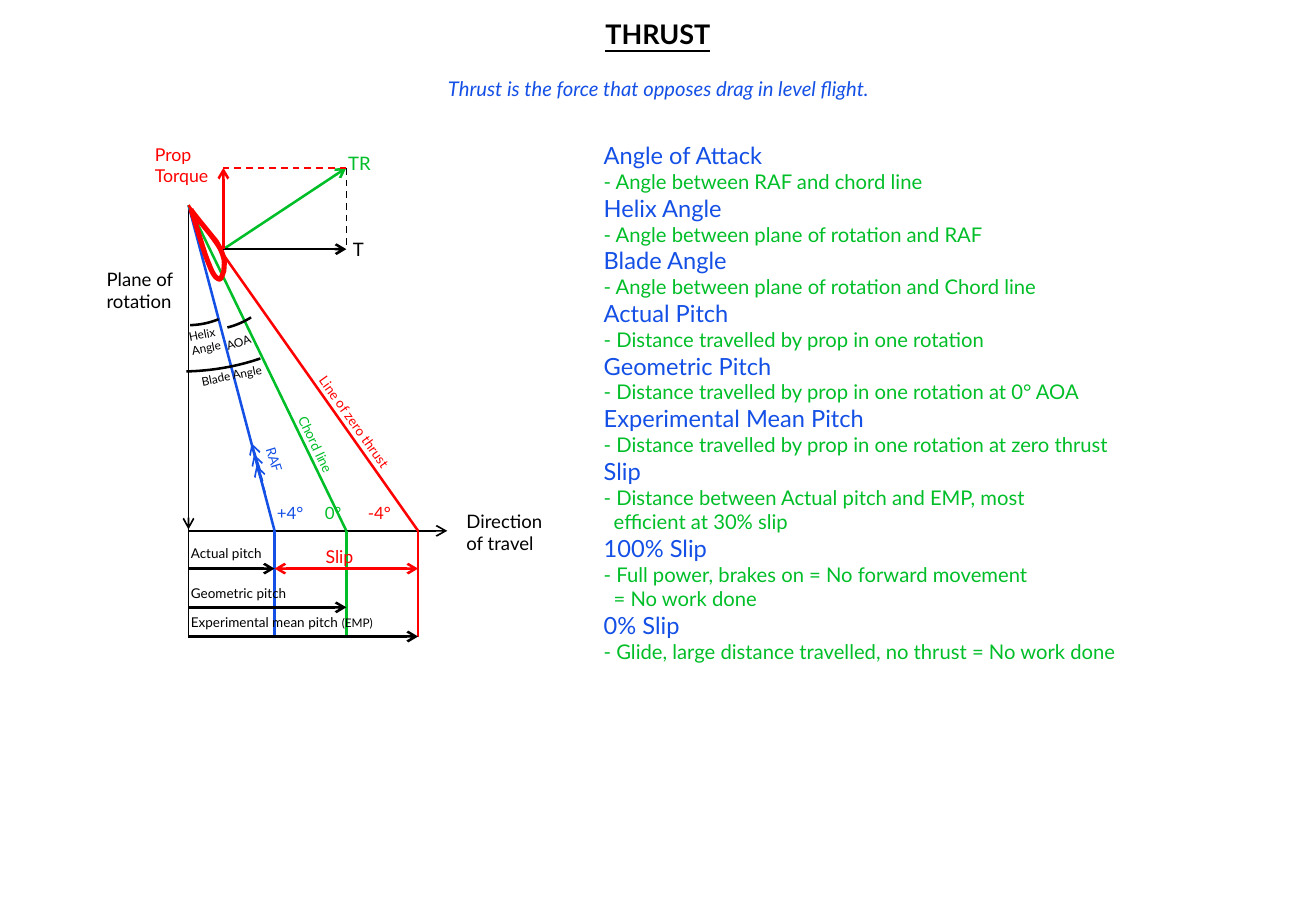
from dataclasses import dataclass

from lxml.etree import SubElement
from pptx import Presentation
from pptx.dml.color import RGBColor
from pptx.enum.dml import MSO_LINE
from pptx.enum.shapes import MSO_CONNECTOR, MSO_SHAPE
from pptx.enum.text import MSO_ANCHOR, MSO_AUTO_SIZE, PP_ALIGN
from pptx.oxml.ns import qn
from pptx.util import Cm, Pt

BLACK, BLUE, GREEN, RED = "000000", "1450E6", "00BE28", "FF0000"
ACTUAL, GEOMETRIC, EXPERIMENTAL = 1.8, 3.3, 4.8

DEFINITIONS = [
    ("Angle of Attack", "- Angle between RAF and chord line"),
    ("Helix Angle", "- Angle between plane of rotation and RAF"),
    ("Blade Angle", "- Angle between plane of rotation and Chord line"),
    ("Actual Pitch", "- Distance travelled by prop in one rotation"),
    ("Geometric Pitch", "- Distance travelled by prop in one rotation at 0° AOA"),
    ("Experimental Mean Pitch", "- Distance travelled by prop in one rotation at zero thrust"),
    ("Slip", "- Distance between Actual pitch and EMP, most", "efficient at 30% slip"),
    ("100% Slip", "- Full power, brakes on = No forward movement", "= No work done"),
    ("0% Slip", "- Glide, large distance travelled, no thrust = No work done"),
]

BLADE_START = (0.05, 0.08)
BLADE_CURVES = [
    ((0.2, 0.53), (0.33, 1.02), (0.43, 1.24)),
    ((0.53, 1.5), (0.58, 1.52), (0.64, 1.55)),
    ((0.69, 1.55), (0.71, 1.45), (0.74, 1.37)),
    ((0.74, 1.3), (0.76, 1.22), (0.74, 1.12)),
    ((0.71, 1.02), (0.69, 0.94), (0.58, 0.76)),
    ((0.46, 0.61), (0.25, 0.36), (0.05, 0.1)),
]


@dataclass
class Box:
    left: float
    top: float
    width: float
    height: float

    def inner(self, x, y, width, height):
        return Box(self.left + x, self.top + y, width, height)

    def point(self, x, y):
        return Cm(self.left + x), Cm(self.top + y)

    def frame(self):
        return Cm(self.left), Cm(self.top), Cm(self.width), Cm(self.height)


def rgb(value):
    return RGBColor.from_string(value)


def style(font, size, color):
    font.name = "Lato"
    font.size = Pt(size)
    font.color.rgb = rgb(color)


def add_text(slide, box, text, size, color, rotation=0):
    label = slide.shapes.add_textbox(*box.frame())
    label.rotation = rotation
    frame = label.text_frame
    frame.word_wrap = True
    frame.text = text
    for paragraph in frame.paragraphs:
        style(paragraph.font, size, color)
    return frame


def add_line(slide, box, start, end, color, width=1.5, arrows=(), dashed=False):
    line = slide.shapes.add_connector(
        MSO_CONNECTOR.STRAIGHT, *box.point(*start), *box.point(*end))
    line.line.color.rgb = rgb(color)
    line.line.width = Pt(width)
    if dashed:
        line.line.dash_style = MSO_LINE.DASH
    for arrow in arrows:
        SubElement(line.line._get_or_add_ln(), qn(f"a:{arrow}"), type="arrow")
    SubElement(line._element.spPr, qn("a:effectLst"))


def add_arc(slide, box, start, end):
    arc = slide.shapes.add_shape(MSO_SHAPE.ARC, *box.frame())
    arc.shadow.inherit = False
    arc.fill.background()
    arc.line.color.rgb = rgb(BLACK)
    arc.line.width = Pt(1.5)
    arc.adjustments[0] = start * 0.6
    arc.adjustments[1] = end * 0.6


def add_heading(slide, box):
    title = slide.shapes.title
    title.left, title.top, title.width, title.height = box.inner(0, 0, box.width, 0.94).frame()
    frame = title.text_frame
    frame.text = "THRUST"
    frame.auto_size = MSO_AUTO_SIZE.NONE
    frame.vertical_anchor = MSO_ANCHOR.TOP
    heading = frame.paragraphs[0]
    heading.alignment = PP_ALIGN.CENTER
    style(heading.font, 16, BLACK)
    heading.font.bold = heading.font.underline = True
    summary = add_text(slide, box.inner(4.7, 1.24, 18.14, 0.76),
                       "Thrust is the force that opposes drag in level flight.", 12, BLUE)
    summary.paragraphs[0].alignment = PP_ALIGN.CENTER
    summary.paragraphs[0].font.italic = True


def add_definitions(slide, box):
    frame = add_text(slide, box, "\n".join(line for entry in DEFINITIONS for line in entry), 12, GREEN)
    paragraphs = iter(frame.paragraphs)
    for entry in DEFINITIONS:
        for position in range(len(entry)):
            paragraph = next(paragraphs)
            if position == 0:
                style(paragraph.font, 14, BLUE)
            elif position == 2:
                paragraph._p.get_or_add_pPr().set("marL", str(Cm(0.21)))


def add_blade(slide, box):
    points = []
    start = BLADE_START
    for first, second, end in BLADE_CURVES:
        for step in range(1, 9):
            t = step / 8
            weights = ((1 - t) ** 3, 3 * t * (1 - t) ** 2, 3 * t * t * (1 - t), t ** 3)
            controls = (start, first, second, end)
            points.append(box.point(*(
                sum(w * control[axis] for w, control in zip(weights, controls))
                for axis in (0, 1))))
        start = end
    builder = slide.shapes.build_freeform(*box.point(*BLADE_START))
    builder.add_line_segments(points, close=False)
    blade = builder.convert_to_shape()
    blade.shadow.inherit = False
    blade.fill.background()
    blade.line.color.rgb = rgb(RED)
    blade.line.width = Pt(3)


def add_triangle(slide, box):
    base = box.height
    add_line(slide, box, (0, 0), (0, base + 2.21), BLACK, 1)
    add_line(slide, box, (0, base - 0.4), (0, base - 0.03), BLACK, 1, ["tailEnd"])
    add_line(slide, box, (0, base), (5.41, base), BLACK, 1, ["tailEnd"])
    for x, color in ((ACTUAL, BLUE), (GEOMETRIC, GREEN), (EXPERIMENTAL, RED)):
        add_line(slide, box, (0, 0), (x, base), color)
    add_blade(slide, box)
    for step in range(3):
        x, y = 1.5 + 0.05 * step, 5.54 + 0.23 * step
        add_line(slide, box, (x, y), (x - 0.18, y - 0.56), BLUE, 1, ["tailEnd"])

    add_arc(slide, box.inner(-3.87, -1.52, 7.39, 5), 53, 87)
    add_arc(slide, box.inner(-1.8, -1.4, 3.6, 3.91), 71, 89)
    add_arc(slide, box.inner(-1.39, -1.3, 3.6, 3.91), 62, 78)

    for text, place, size, color, rotation in (
        ("Direction\nof travel", (5.56, 6.25, 3.2, 1.19), 11, BLACK, 0),
        ("Plane of rotation", (-1.96, 1.19, 2.72, 1.19), 11, BLACK, 0),
        ("Helix\nAngle", (-0.23, 2.26, 2.79, 0.86), 7, BLACK, 349.1),
        ("AOA", (0.53, 2.54, 1.32, 0.56), 7, BLACK, 340.7),
        ("Blade Angle", (0, 3.12, 3.51, 0.56), 7, BLACK, 348.7),
        ("RAF", (1.12, 5.23, 1.47, 0.61), 8, BLUE, 72.9),
        ("Chord line", (1.47, 5.16, 2.79, 0.61), 8, GREEN, 64.7),
        ("Line of zero thrust", (1.98, 4.42, 3.23, 0.61), 8, RED, 54.3),
    ):
        add_text(slide, box.inner(*place), text, size, color, rotation)

    angles = add_text(slide, box.inner(1.6, 6.1, 6.81, 0.71), "", 10, BLUE).paragraphs[0]
    tabs = SubElement(angles._p.get_or_add_pPr(), qn("a:tabLst"))
    angles._p.pPr.insert(0, tabs)
    for stop in (1, 1.9):
        SubElement(tabs, qn("a:tab"), pos=str(Cm(stop)), algn="l")
    for text, color in (("+4°", BLUE), ("\t0°", GREEN), ("\t-4°", RED)):
        run = angles.add_run()
        run.text = text
        style(run.font, 10, color)


def add_forces(slide, box):
    right, bottom = box.width, box.height
    add_line(slide, box, (0, bottom), (right, 0), GREEN, arrows=["tailEnd"])
    add_line(slide, box, (0, bottom), (right, bottom), BLACK, arrows=["tailEnd"])
    add_line(slide, box, (0, bottom), (0, 0), RED, arrows=["tailEnd"])
    add_line(slide, box, (right, 0), (right, bottom), BLACK, 1, dashed=True)
    add_line(slide, box, (right, 0), (0, 0), RED, 1, dashed=True)
    add_text(slide, box.inner(2.36, -0.45, 1.9, 0.74), "TR", 11, GREEN)
    add_text(slide, box.inner(2.46, 1.35, 2.39, 0.74), "T", 11, BLACK)
    add_text(slide, box.inner(-1.68, -0.63, 2.39, 1.19), "Prop Torque", 10.5, RED)


def add_pitches(slide, box):
    for x, color in ((ACTUAL, BLUE), (GEOMETRIC, GREEN), (EXPERIMENTAL, RED)):
        add_line(slide, box, (x, 0), (x, box.height), color)
    for text, x, y, label_y, width in (
        ("Actual pitch", ACTUAL, 0.79, 0.18, 2.59),
        ("Geometric pitch", GEOMETRIC, 1.6, 1.01, 3),
        ("Experimental mean pitch ", EXPERIMENTAL, box.height, 1.62, 5.21),
    ):
        add_line(slide, box, (0, y), (x, y), BLACK, arrows=["tailEnd"])
        frame = add_text(slide, box.inner(-0.2, label_y, width, 0.61), text, 8, BLACK)
    abbreviation = frame.paragraphs[0].add_run()
    abbreviation.text = "(EMP)"
    abbreviation.font.size = Pt(7)
    add_line(slide, box, (ACTUAL, 0.79), (EXPERIMENTAL, 0.79), RED, arrows=["headEnd", "tailEnd"])
    add_text(slide, box.inner(2.62, 0.18, 1.35, 0.74), "Slip", 10.5, RED)


def main():
    deck = Presentation()
    deck.slide_width, deck.slide_height = Cm(27.51), Cm(19.05)
    slide = deck.slides.add_slide(deck.slide_layouts[5])
    add_heading(slide, Box(0, 0.23, 27.51, 2))
    add_triangle(slide, Box(3.94, 4.29, EXPERIMENTAL, 6.81))
    add_pitches(slide, Box(3.94, 11.1, EXPERIMENTAL, 2.21))
    add_forces(slide, Box(4.67, 3.51, 2.57, 1.7))
    add_definitions(slide, Box(12.37, 2.82, 14.22, 11.46))
    deck.save("out.pptx")


if __name__ == "__main__":
    main()
